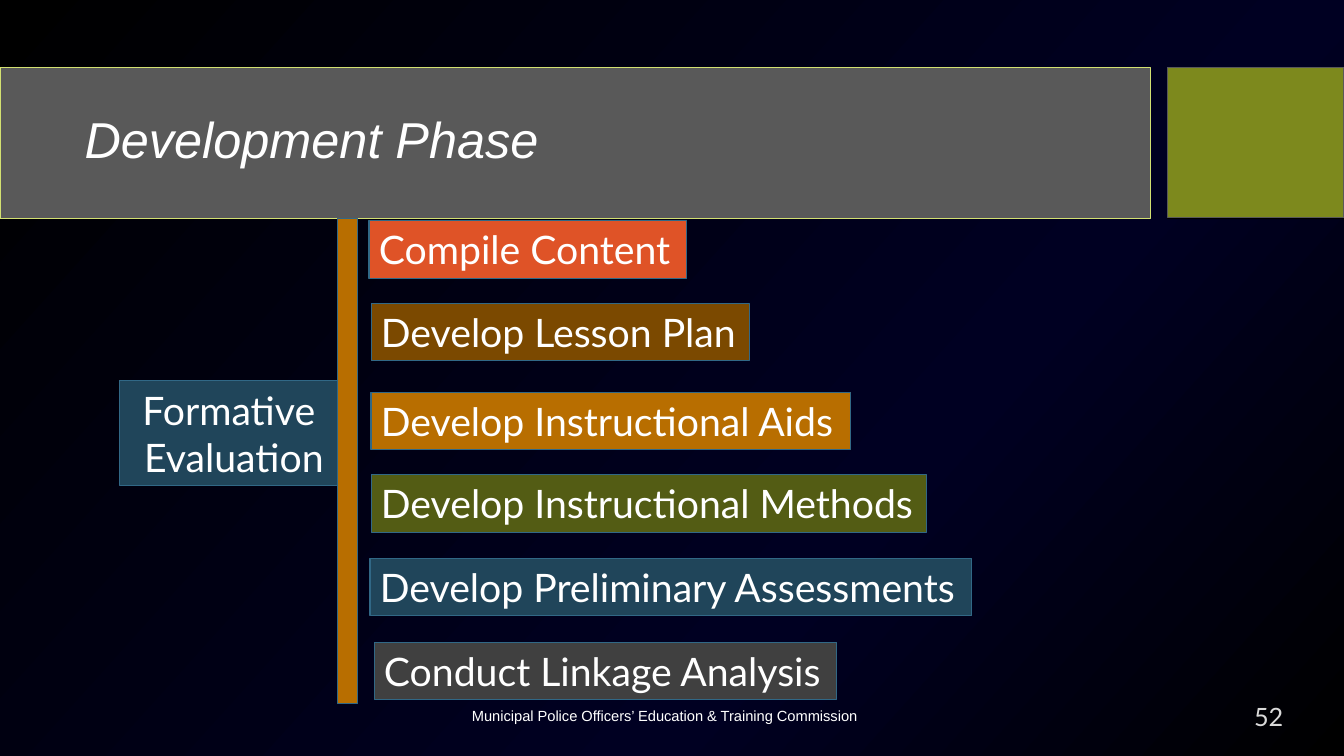
from copy import deepcopy

from pptx import Presentation
from pptx.dml.color import RGBColor
from pptx.enum.shapes import MSO_SHAPE
from pptx.enum.text import MSO_ANCHOR as Anchor, MSO_AUTO_SIZE as AutoSize, PP_ALIGN as Align
from pptx.util import Inches, Pt

BLACK = RGBColor(0x00, 0x00, 0x00)
MIDNIGHT = RGBColor(0x00, 0x00, 0x22)
WHITE = RGBColor(0xFF, 0xFF, 0xFF)
PALE_GRAY = RGBColor(0xD9, 0xD9, 0xD9)
GRAY = RGBColor(0x59, 0x59, 0x59)
CHARCOAL = RGBColor(0x40, 0x40, 0x40)
LIME = RGBColor(0xD3, 0xE1, 0x71)
OLIVE = RGBColor(0x7D, 0x89, 0x1D)
DARK_OLIVE = RGBColor(0x53, 0x5C, 0x14)
RED = RGBColor(0xDF, 0x53, 0x27)
BROWN = RGBColor(0x7B, 0x49, 0x00)
AMBER = RGBColor(0xB8, 0x6E, 0x00)
TEAL = RGBColor(0x20, 0x45, 0x5A)
BLUE = RGBColor(0x31, 0x68, 0x86)

STEP_HEIGHT = 0.57
STEPS = [
    ("Compile Content", 3.66, 2.19, 3.15, RED),
    ("Develop Lesson Plan", 3.68, 3.01, 3.75, BROWN),
    ("Develop Instructional Aids", 3.68, 3.89, 4.76, AMBER),
    ("Develop Instructional Methods", 3.68, 4.71, 5.51, DARK_OLIVE),
    ("Develop Preliminary Assessments", 3.67, 5.54, 5.97, TEAL),
    ("Conduct Linkage Analysis", 3.71, 6.37, 4.59, CHARCOAL),
]
LABEL_FONT = {"name": "Lato", "size": Pt(28)}


def set_background(slide):
    fill = slide.background.fill
    fill.gradient()
    fill.gradient_angle = 360 - 42
    stop_list = fill._fill._gradFill.gsLst
    stop_list.append(deepcopy(stop_list[-1]))
    stops = [(0, BLACK), (0.66, MIDNIGHT), (1, BLACK)]
    for stop, (position, color) in zip(fill.gradient_stops, stops):
        stop.position = position
        stop.color.rgb = color


def write_text(shape, lines, font, color=WHITE, align=Align.LEFT,
               anchor=Anchor.TOP, line_spacing=None):
    frame = shape.text_frame
    frame.vertical_anchor = anchor
    frame.text = "\n".join(lines)
    for paragraph in frame.paragraphs:
        paragraph.alignment = align
        paragraph.line_spacing = line_spacing
        paragraph.font.color.rgb = color
        for name, value in font.items():
            setattr(paragraph.font, name, value)


def add_text(slide, box, text, font, **layout):
    shape = slide.shapes.add_textbox(*map(Inches, box))
    shape.text_frame.word_wrap = True
    write_text(shape, [text], font, **layout)


def add_rectangle(slide, box, fill, line, line_width=0.75):
    shape = slide.shapes.add_shape(MSO_SHAPE.RECTANGLE, *map(Inches, box))
    shape.shadow.inherit = False
    if fill is None:
        shape.fill.background()
    else:
        shape.fill.solid()
        shape.fill.fore_color.rgb = fill
    shape.line.color.rgb = line
    shape.line.width = Pt(line_width)
    return shape


def add_label(slide, box, lines, fill, align=Align.LEFT):
    """Add a filled rectangle that fits its unwrapped text."""
    shape = add_rectangle(slide, box, fill, BLUE)
    shape.text_frame.word_wrap = False
    shape.text_frame.auto_size = AutoSize.SHAPE_TO_FIT_TEXT
    write_text(shape, lines, LABEL_FONT, align=align)


def main():
    presentation = Presentation()
    presentation.slide_width = Inches(13.33)
    presentation.slide_height = Inches(7.5)
    slide = presentation.slides.add_slide(presentation.slide_layouts[6])
    set_background(slide)

    add_text(slide, (12.34, 6.91, 0.66, 0.3), "52",
             {"name": "Lato", "size": Pt(18)}, color=PALE_GRAY)
    add_rectangle(slide, (0, 0.67, 11.41, 1.5), GRAY, LIME, 1)
    add_rectangle(slide, (11.58, 0.67, 1.75, 1.5), OLIVE, BLACK, 1)
    add_text(slide, (3.54, 6.9, 6.11, 0.4),
             "Municipal Police Officers’ Education & Training Commission",
             {"name": "Arial", "size": Pt(10.5)},
             align=Align.CENTER, anchor=Anchor.MIDDLE)
    add_rectangle(slide, (11.58, 0.67, 1.75, 1.49), None, GRAY, 1)
    add_text(slide, (0.74, 0.82, 10.51, 1.18), "Development Phase",
             {"name": "Arial", "size": Pt(36), "italic": True},
             anchor=Anchor.MIDDLE, line_spacing=0.9)

    for text, left, top, width, fill in STEPS:
        add_label(slide, (left, top, width, STEP_HEIGHT), [text], fill)
    add_label(slide, (1.19, 3.78, 2.16, 1.04), ["Formative", " Evaluation"],
              TEAL, Align.CENTER)
    add_rectangle(slide, (3.35, 2.17, 0.2, 4.81), AMBER, BLUE)

    presentation.save("out.pptx")


if __name__ == "__main__":
    main()
